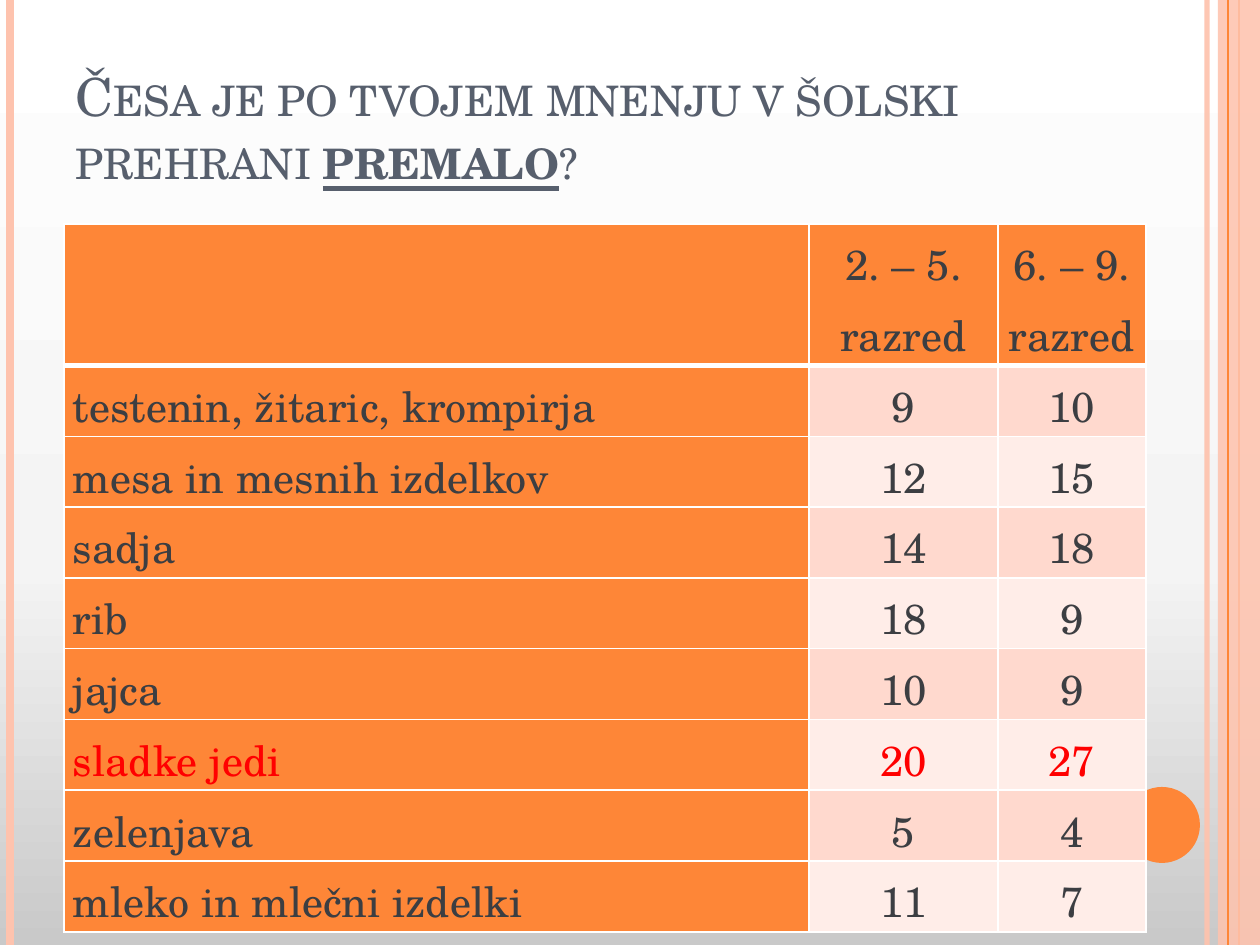
"""Build a slide with a survey table about school meals."""
import copy
from dataclasses import dataclass

import pptx
import pptx.dml.color
import pptx.enum.shapes
import pptx.enum.text
import pptx.oxml
import pptx.oxml.ns
import pptx.util

PX = 914400 // 126
SLIDE_WIDTH, SLIDE_HEIGHT = 1260, 945
ALIGN = pptx.enum.text.PP_ALIGN
ANCHOR = pptx.enum.text.MSO_ANCHOR
SHAPE = pptx.enum.shapes.MSO_SHAPE
qn = pptx.oxml.ns.qn


@dataclass(frozen=True)
class Theme:
    font: str = "TeX Gyre Schola"
    title_size: int = 30
    table_size: int = 24
    title: str = "575F6D"
    text: str = "3C3E42"
    highlight: str = "FF0000"
    accent: str = "FE8637"
    pale: str = "FEC3AE"
    border: str = "FFFFFF"
    bands: tuple = ("FFD9CE", "FFEDE8")
    background: tuple = ((0, "C9C9C9"), (0.4, "F4F4F4"), (1, "FFFFFF"))


THEME = Theme()
HEADERS = ["", "2. – 5. razred", "6. – 9. razred"]
ANSWERS = [
    ("testenin, žitaric, krompirja", 9, 10),
    ("mesa in mesnih izdelkov", 12, 15),
    ("sadja", 14, 18),
    ("rib", 18, 9),
    ("jajca", 10, 9),
    ("sladke jedi", 20, 27),
    ("zelenjava", 5, 4),
    ("mleko in mlečni izdelki", 11, 7),
]
HIGHLIGHTED = "sladke jedi"
COLUMN_WIDTHS = [745, 189, 148]
ROW_HEIGHTS = [97, 52, 49, 47, 47, 47, 47, 47, 52]


def rgb(value):
    return pptx.dml.color.RGBColor.from_string(value)


def scaled(*lengths):
    return [length * PX for length in lengths]


def add_text(para, text, size, color, bold=False, underline=False, small_caps=False):
    span = para.add_run()
    span.text = text
    font = span.font
    font.name, font.size = THEME.font, pptx.util.Pt(size)
    font.bold, font.underline = bold, underline
    font.color.rgb = rgb(color)
    if small_caps:
        span._r.get_or_add_rPr().set("cap", "small")


def set_opacity(shape, percent):
    color = shape._element.spPr.find(".//" + qn("a:srgbClr"))
    pptx.oxml.ns.nsdecls("a")
    alpha = color.makeelement(qn("a:alpha"), {"val": str(percent * 1000)})
    color.append(alpha)


def add_vertical_line(page, x, color, width, opacity=100):
    line = page.shapes.add_connector(
        pptx.enum.shapes.MSO_CONNECTOR.STRAIGHT, *scaled(x, 0, x, SLIDE_HEIGHT))
    line.line.color.rgb = rgb(color)
    line.line.width = pptx.util.Pt(width)
    properties = line._element.spPr
    properties.append(properties.makeelement(qn("a:effectLst"), {}))
    if opacity < 100:
        set_opacity(line, opacity)


def add_filled_shape(page, kind, left, top, width, height, color, opacity=100):
    shape = page.shapes.add_shape(kind, *scaled(left, top, width, height))
    shape.shadow.inherit = False
    shape.fill.solid()
    shape.fill.fore_color.rgb = rgb(color)
    shape.line.fill.background()
    if opacity < 100:
        set_opacity(shape, opacity)


def paint_background(page):
    fill = page.background.fill
    fill.gradient()
    fill.gradient_angle = 90
    stop_list = page.element.find(".//" + qn("a:gsLst"))
    stop_list.append(copy.deepcopy(stop_list[0]))
    for stop, (position, color) in zip(fill.gradient_stops, THEME.background):
        stop.position = position
        stop.color.rgb = rgb(color)


def add_decoration(page):
    add_vertical_line(page, 1207, THEME.pale, 3, opacity=93)
    add_vertical_line(page, 10, THEME.pale, 4.5)
    add_vertical_line(page, 1239, THEME.accent, 1.5)
    add_filled_shape(page, SHAPE.RECTANGLE, 1218, 0, 42, SLIDE_HEIGHT, THEME.pale, opacity=87)
    add_vertical_line(page, 1228, THEME.accent, 0.75)
    add_filled_shape(page, SHAPE.OVAL, 1124, 787, 76, 76, THEME.accent)


def fill_title(page):
    title = page.shapes.title
    title.left, title.top, title.width, title.height = scaled(63, 38, 1029, 158)
    frame = title.text_frame
    frame.word_wrap = True
    frame.auto_size = pptx.enum.text.MSO_AUTO_SIZE.NONE
    frame.vertical_anchor = ANCHOR.BOTTOM
    para = frame.paragraphs[0]
    para.alignment = ALIGN.LEFT
    look = dict(size=THEME.title_size, color=THEME.title, small_caps=True)
    add_text(para, "Česa je po tvojem mnenju v šolski prehrani ", **look)
    add_text(para, "premalo", bold=True, underline=True, **look)
    add_text(para, "?", **look)


def set_borders(cell, **widths):
    properties = cell._tc.get_or_add_tcPr()
    for side in "LRTB":
        width = pptx.util.Pt(widths.get(side, 1))
        properties.append(pptx.oxml.parse_xml(
            f'<a:ln{side} {pptx.oxml.ns.nsdecls("a")} w="{width}"><a:solidFill>'
            f'<a:srgbClr val="{THEME.border}"/></a:solidFill></a:ln{side}>'))


def format_cell(cell, text, fill, color, alignment):
    cell.margin_left = cell.margin_right = 9 * PX
    cell.margin_top = cell.margin_bottom = 0
    cell.fill.solid()
    cell.fill.fore_color.rgb = rgb(fill)
    if text:
        para = cell.text_frame.paragraphs[0]
        para.alignment = alignment
        para.line_spacing = 1.15
        add_text(para, text, THEME.table_size, color)


def add_answer_table(page):
    rows = [HEADERS, *ANSWERS]
    frame = page.shapes.add_table(
        len(rows), len(HEADERS), *scaled(64, 224, sum(COLUMN_WIDTHS), 580))
    table = frame.table
    table.first_row = table.horz_banding = False
    for column, width in zip(table.columns, COLUMN_WIDTHS):
        column.width = width * PX
    for row, height in zip(table.rows, ROW_HEIGHTS):
        row.height = height * PX
    frame.height = 580 * PX
    for i, values in enumerate(rows):
        color = THEME.highlight if values[0] == HIGHLIGHTED else THEME.text
        for j, value in enumerate(values):
            cell = table.cell(i, j)
            fill = THEME.accent if i == 0 or j == 0 else THEME.bands[(i - 1) % 2]
            set_borders(cell, T=3 if i == 1 else 1, B=3 if i == 0 else 1)
            format_cell(cell, str(value), fill, color, ALIGN.CENTER if j else ALIGN.LEFT)


def main():
    deck = pptx.Presentation()
    deck.slide_width, deck.slide_height = scaled(SLIDE_WIDTH, SLIDE_HEIGHT)
    page = deck.slides.add_slide(deck.slide_layouts.get_by_name("Title Only"))
    paint_background(page)
    add_decoration(page)
    fill_title(page)
    add_answer_table(page)
    deck.save("out.pptx")


if __name__ == "__main__":
    main()
